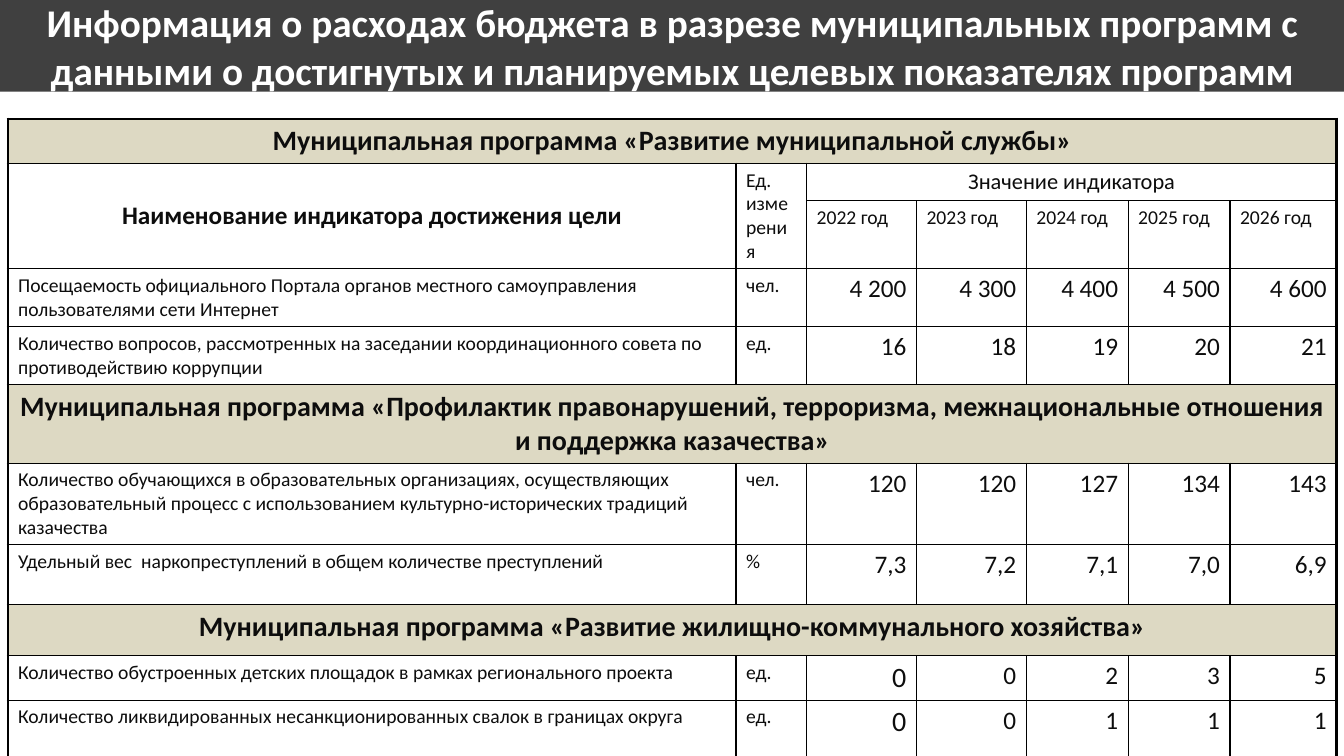
"""Build a slide with a table of municipal programme indicators."""
from lxml.etree import SubElement
from pptx import Presentation
from pptx.dml.color import RGBColor
from pptx.enum.text import MSO_ANCHOR as ANCHOR, MSO_AUTO_SIZE as AUTO, PP_ALIGN as ALIGN
from pptx.oxml.ns import qn
from pptx.util import Inches, Pt

FONT = "Calibri"
WHITE = RGBColor(0xFF, 0xFF, 0xFF)
INK = RGBColor(0x0D, 0x0D, 0x0D)
BLACK = RGBColor(0, 0, 0)
DARK = RGBColor(0x40, 0x40, 0x40)
SAND = RGBColor(0xDD, 0xD9, 0xC3)
THIN, THICK = 1, 2.25

TITLE = ("Информация о расходах бюджета в разрезе муниципальных программ с "
         "данными о достигнутых и планируемых целевых показателях программ")
WIDTHS = [7.22, 0.7, 1.09, 1.09, 1.01, 1.01, 1.06]
HEIGHTS = [0.43, 0.37, 0.67, 0.4, 0.57, 0.77, 0.57, 0.59, 0.51, 0.43, 0.57]
YEARS = range(2022, 2027)
PROGRAMS = {
    0: "Муниципальная программа «Развитие муниципальной службы»",
    5: "Муниципальная программа «Профилактик правонарушений, терроризма, "
       "межнациональные отношения и поддержка казачества»",
    8: "Муниципальная программа «Развитие жилищно-коммунального хозяйства»",
}
INDICATORS = {
    3: ("Посещаемость официального Портала органов местного самоуправления "
        "пользователями сети Интернет", "чел.",
        ["4 200", "4 300", "4 400", "4 500", "4 600"]),
    4: ("Количество вопросов, рассмотренных на заседании координационного совета "
        "по противодействию коррупции", "ед.", ["16", "18", "19", "20", "21"]),
    6: ("Количество обучающихся в образовательных организациях, осуществляющих "
        "образовательный процесс с использованием культурно-исторических традиций "
        "казачества", "чел.", ["120", "120", "127", "134", "143"]),
    7: ("Удельный вес  наркопреступлений в общем количестве преступлений", "%",
        ["7,3", "7,2", "7,1", "7,0", "6,9"]),
    9: ("Количество обустроенных детских площадок в рамках регионального проекта",
        "ед.", ["0", "0", "2", "3", "5"]),
    10: ("Количество ликвидированных несанкционированных свалок в границах округа",
         "ед.", ["0", "0", "1", "1", "1"]),
}


def set_font(p, size, color, bold=False):
    """Format every run of a paragraph."""
    p.font.name, p.font.size, p.font.bold = FONT, Pt(size), bold
    p.font.color.rgb = color


def add_title(slide):
    """Turn the title placeholder into a dark band."""
    sp = slide.shapes.title
    sp.left, sp.top, sp.width, sp.height = 0, 0, Inches(13.33), Inches(0.91)
    sp.fill.solid()
    sp.fill.fore_color.rgb = DARK
    tf = sp.text_frame
    tf.text, tf.word_wrap = TITLE, True
    tf.auto_size, tf.vertical_anchor = AUTO.NONE, ANCHOR.MIDDLE
    p = tf.paragraphs[0]
    p.alignment = ALIGN.CENTER
    set_font(p, 28, WHITE, True)


def set_borders(cell, **widths):
    """Draw the cell edges L, R, T and B with the given widths in points."""
    tc_pr = cell._tc.get_or_add_tcPr()
    for side, width in widths.items():
        ln = SubElement(tc_pr, qn(f"a:ln{side}"), w=str(Pt(width)))
        fill = SubElement(ln, qn("a:solidFill"))
        SubElement(fill, qn("a:srgbClr"), val=str(BLACK))


def fill_cell(table, row, col, text, size=14, align=ALIGN.LEFT, bold=False,
              span=(1, 1), anchor=ANCHOR.TOP, fill=None):
    """Write one cell, merge its span and draw thick lines on the table's rim."""
    cell = table.cell(row, col)
    bottom, right = row + span[0], col + span[1]
    if span != (1, 1):
        cell.merge(table.cell(bottom - 1, right - 1))
    cell.text, cell.vertical_anchor = text, anchor
    p = cell.text_frame.paragraphs[0]
    p.alignment, p.space_after = align, Pt(6)
    set_font(p, size, INK, bold)
    set_borders(cell, L=THIN if col else THICK,
                R=THICK if right == len(WIDTHS) else THIN,
                T=THIN if row else THICK,
                B=THICK if bottom == len(HEIGHTS) else THIN)
    if fill is None:
        cell.fill.background()
    else:
        cell.fill.solid()
        cell.fill.fore_color.rgb = fill


def add_table(slide):
    """Add the empty table with its column widths and row heights."""
    frame = slide.shapes.add_table(len(HEIGHTS), len(WIDTHS), Inches(0.08), Inches(1.18),
                                   Inches(sum(WIDTHS)), Inches(sum(HEIGHTS)))
    table = frame.table
    table.first_row = table.horz_banding = False
    for column, width in zip(table.columns, WIDTHS):
        column.width = Inches(width)
    for row, height in zip(table.rows, HEIGHTS):
        row.height = Inches(height)
    return table


def fill_header(table):
    """Write the column headings."""
    fill_cell(table, 1, 0, "Наименование индикатора достижения цели", 18, ALIGN.CENTER,
              True, (2, 1), ANCHOR.MIDDLE)
    fill_cell(table, 1, 1, "Ед. измерения", span=(2, 1), anchor=ANCHOR.MIDDLE)
    fill_cell(table, 1, 2, "Значение индикатора", 16, ALIGN.CENTER,
              span=(1, 5), anchor=ANCHOR.MIDDLE)
    for col, year in enumerate(YEARS, 2):
        fill_cell(table, 2, col, f"{year} год")


def fill_indicator(table, row, name, unit, values):
    """Write one indicator with its yearly values."""
    fill_cell(table, row, 0, name)
    fill_cell(table, row, 1, unit)
    for col, value in enumerate(values, 2):
        size = 20 if col == 2 and value == "0" else 18
        fill_cell(table, row, col, value, size, ALIGN.RIGHT)


def main():
    """Create and save the presentation."""
    prs = Presentation()
    prs.slide_width, prs.slide_height = Inches(13.33), Inches(7.5)
    slide = prs.slides.add_slide(prs.slide_layouts[5])
    add_title(slide)
    table = add_table(slide)
    fill_header(table)
    for row, name in PROGRAMS.items():
        fill_cell(table, row, 0, name, 20, ALIGN.CENTER, True, (1, len(WIDTHS)), fill=SAND)
    for row, indicator in INDICATORS.items():
        fill_indicator(table, row, *indicator)
    prs.save("out.pptx")


if __name__ == "__main__":
    main()
